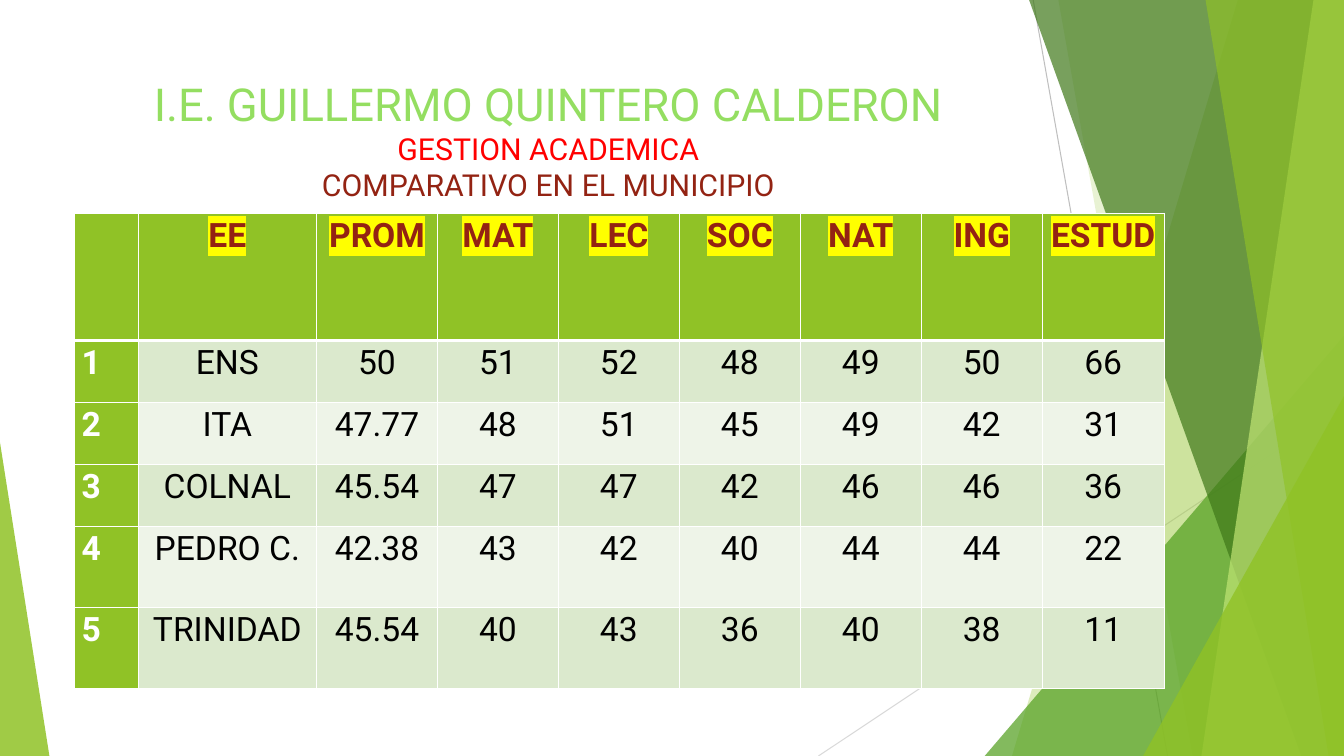
from dataclasses import dataclass

from lxml.etree import SubElement
from pptx import Presentation
from pptx.dml.color import RGBColor
from pptx.enum.shapes import MSO_CONNECTOR, MSO_SHAPE
from pptx.enum.text import MSO_ANCHOR, PP_ALIGN
from pptx.oxml.ns import qn
from pptx.util import Pt

WIDTH, HEIGHT = 960, 540


@dataclass(frozen=True)
class Theme:
    font: str = "Roboto"
    green: str = "90C226"
    leaf: str = "54A021"
    forest: str = "3F7819"
    lime: str = "C0E474"
    title: str = "94DE61"
    red: str = "FF0000"
    brown: str = "932313"
    highlight: str = "FFFF00"
    white: str = "FFFFFF"
    black: str = "000000"
    dark_line: str = "BFBFBF"
    light_line: str = "D9D9D9"
    bands: tuple = ("DBE9CD", "EEF4E8")
    title_size: float = 32.4
    subtitle_size: float = 21.6
    table_size: float = 24


class SlideBuilder:
    def __init__(self, slide, theme):
        self.shapes = slide.shapes
        self.theme = theme

    def line(self, x1, y1, x2, y2, color):
        cx = self.shapes.add_connector(
            MSO_CONNECTOR.STRAIGHT, Pt(x1), Pt(y1), Pt(x2), Pt(y2))
        cx.line.color.rgb = RGBColor.from_string(color)
        cx.line.width = Pt(0.75)
        SubElement(cx._element.spPr, qn("a:effectLst"))

    def paint(self, sp, color, opacity):
        sp.shadow.inherit = False
        sp.line.fill.background()
        sp.fill.solid()
        sp.fill.fore_color.rgb = RGBColor.from_string(color)
        clr = sp._element.spPr.find(qn("a:solidFill")).find(qn("a:srgbClr"))
        SubElement(clr, qn("a:alpha"), val=str(opacity * 1000))

    def band(self, top_x, bottom_x, color, opacity):
        """Full-height band from a slanted left side to the right slide edge."""
        fb = self.shapes.build_freeform(Pt(top_x), 0)
        fb.add_line_segments([(Pt(WIDTH), 0), (Pt(WIDTH), Pt(HEIGHT)),
                              (Pt(bottom_x), Pt(HEIGHT))])
        self.paint(fb.convert_to_shape(), color, opacity)

    def triangle(self, x, y, w, apex, color, opacity):
        """Triangle standing on the bottom slide edge."""
        sp = self.shapes.add_shape(MSO_SHAPE.ISOSCELES_TRIANGLE,
                                   Pt(x), Pt(y), Pt(w), Pt(HEIGHT - y))
        sp.adjustments[0] = apex
        self.paint(sp, color, opacity)

    def style(self, p, size, color, bold=False, align=PP_ALIGN.CENTER):
        p.alignment = align
        p.font.name = self.theme.font
        p.font.size = Pt(size)
        p.font.bold = bold
        p.font.color.rgb = RGBColor.from_string(color)

    def text(self, x, y, w, h, lines):
        tf = self.shapes.add_textbox(Pt(x), Pt(y), Pt(w), Pt(h)).text_frame
        tf.word_wrap = True
        tf.vertical_anchor = MSO_ANCHOR.TOP
        tf.margin_top = Pt(6)
        for i, (text, size, color) in enumerate(lines):
            p = tf.add_paragraph() if i else tf.paragraphs[0]
            p.text = text
            self.style(p, size, color)

    def borders(self, cell, top, bottom):
        tc_pr = cell._tc.get_or_add_tcPr()
        sides = (("L", 1), ("R", 1), ("T", top), ("B", bottom))
        for i, (side, width) in enumerate(sides):
            ln = SubElement(tc_pr, qn(f"a:ln{side}"), w=str(Pt(width)))
            fill = SubElement(ln, qn("a:solidFill"))
            SubElement(fill, qn("a:srgbClr"), val=self.theme.white)
            tc_pr.insert(i, ln)

    def highlight(self, r):
        hl = SubElement(r._r.get_or_add_rPr(), qn("a:highlight"))
        SubElement(hl, qn("a:srgbClr"), val=self.theme.highlight)

    def cell(self, cell, text, row, col):
        t = self.theme
        header, label = row == 0, col == 0
        cell.fill.solid()
        cell.fill.fore_color.rgb = RGBColor.from_string(
            t.green if header or label else t.bands[(row - 1) % 2])
        self.borders(cell, 3 if row == 1 else 1, 3 if header else 1)
        cell.margin_left = cell.margin_right = Pt(5)
        cell.margin_top = cell.margin_bottom = 0
        p = cell.text_frame.paragraphs[0]
        p.line_spacing = 1.07
        color = t.brown if header else t.white if label else t.black
        self.style(p, t.table_size, color, header or label,
                   PP_ALIGN.LEFT if label else PP_ALIGN.CENTER)
        if text:
            r = p.add_run()
            r.text = text
            if header:
                self.highlight(r)

    def table(self, x, y, widths, heights, rows):
        table = self.shapes.add_table(
            len(rows), len(widths), Pt(x), Pt(y),
            Pt(sum(widths)), Pt(sum(heights))).table
        for column, width in zip(table.columns, widths):
            column.width = Pt(width)
        for row, height in zip(table.rows, heights):
            row.height = Pt(height)
        for i, values in enumerate(rows):
            for j, text in enumerate(values):
                self.cell(table.cell(i, j), text, i, j)


SCORES = [
    ["", "EE", "PROM", "MAT", "LEC", "SOC", "NAT", "ING", "ESTUD"],
    ["1", "ENS", "50", "51", "52", "48", "49", "50", "66"],
    ["2", "ITA", "47.77", "48", "51", "45", "49", "42", "31"],
    ["3", "COLNAL", "45.54", "47", "47", "42", "46", "46", "36"],
    ["4", "PEDRO C.", "42.38", "43", "42", "40", "44", "44", "22"],
    ["5", "TRINIDAD", "45.54", "40", "43", "36", "40", "38", "11"],
]


def main():
    prs = Presentation()
    prs.slide_width, prs.slide_height = Pt(WIDTH), Pt(HEIGHT)
    t = Theme()
    s = SlideBuilder(prs.slides.add_slide(prs.slide_layouts[6]), t)

    # Background facets
    s.line(738, 0, 834, HEIGHT, t.dark_line)
    s.line(WIDTH, 290, 584.6, HEIGHT, t.light_line)
    s.band(884.2, 722.9, t.green, 30)
    s.band(756, 851.8, t.green, 20)
    s.triangle(703.4, 239.8, 256.6, 1, t.leaf, 72)
    s.band(735.1, 929.5, t.forest, 70)
    s.band(938.2, 858.2, t.lime, 70)
    s.band(861.1, 949, t.green, 65)
    s.triangle(816.5, 283, 143.5, 1, t.green, 80)
    s.triangle(0, 316.1, 35.3, 0, t.green, 85)

    # Title
    s.text(53.3, 48.2, 676.8, 104.4, [
        ("I.E. GUILLERMO QUINTERO CALDERON", t.title_size, t.title),
        ("GESTION ACADEMICA", t.subtitle_size, t.red),
        ("COMPARATIVO EN EL MUNICIPIO", t.subtitle_size, t.brown),
    ])

    # Score table
    s.table(53.3, 152.6, [45.4, 127.4] + [86.4] * 6 + [87.1],
            [90.7] + [44.2] * 3 + [58] * 2, SCORES)

    prs.save("out.pptx")


if __name__ == "__main__":
    main()
